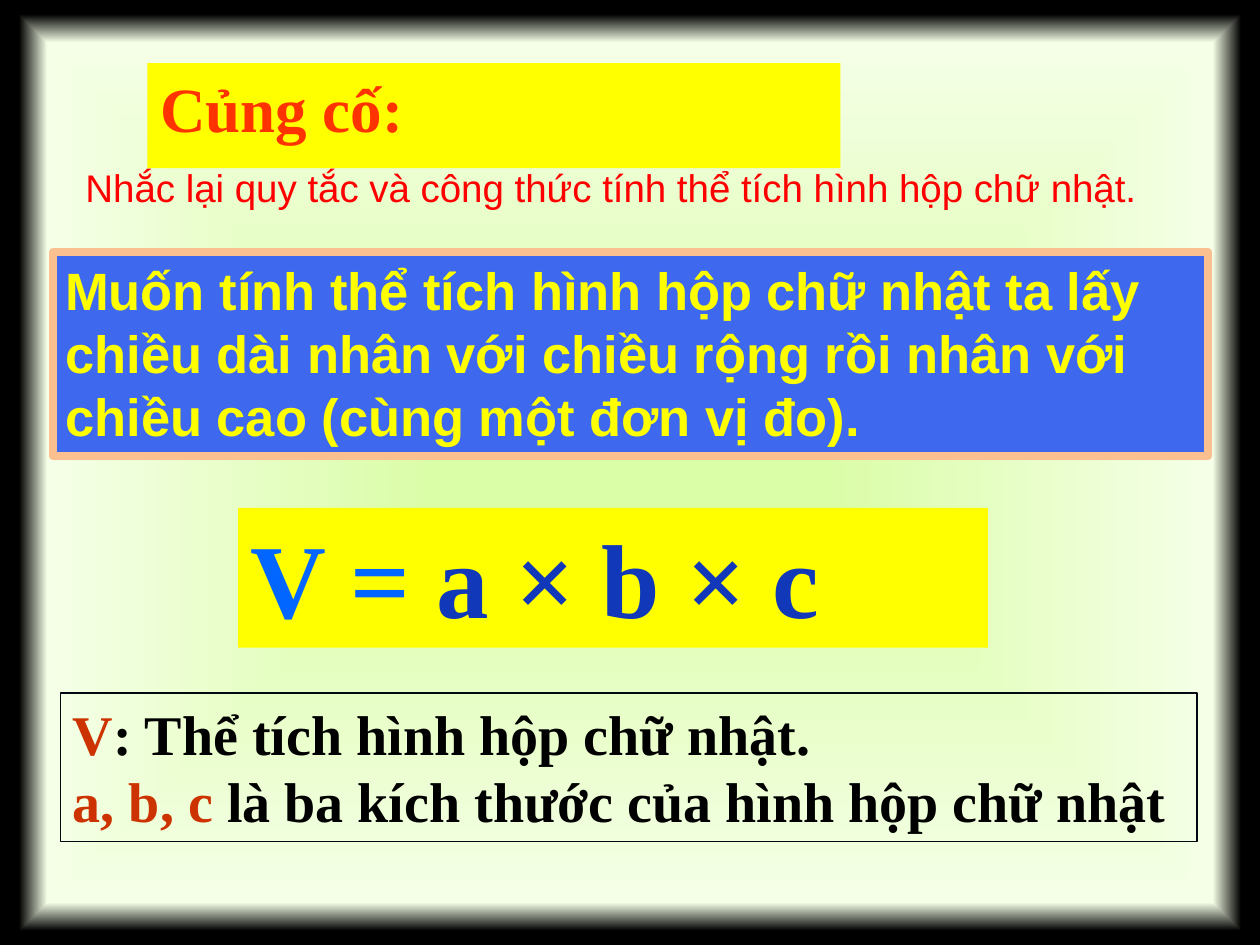
"""Build a review slide on the volume of a rectangular box."""
from dataclasses import dataclass
from typing import Optional

from lxml import etree
from pptx import Presentation
from pptx.dml.color import RGBColor
from pptx.enum import shapes, text
from pptx.oxml import ns
from pptx.util import Inches, Pt

YELLOW = RGBColor(0xFF, 0xFF, 0x00)
ORANGE = RGBColor(0xFF, 0x33, 0x00)
RED = RGBColor(0xFF, 0x00, 0x00)
SKY = RGBColor(0x00, 0x66, 0xFF)
NAVY = RGBColor(0x10, 0x38, 0xB8)
BLUE = RGBColor(0x3E, 0x68, 0xEE)
PEACH = RGBColor(0xFA, 0xC0, 0x90)
RUST = RGBColor(0xCC, 0x33, 0x00)
BLACK = RGBColor(0x00, 0x00, 0x00)
INK = RGBColor(0x00, 0x08, 0x10)
LIME = RGBColor(0xDA, 0xFD, 0xA7)
CREAM = RGBColor(0xF5, 0xFF, 0xE7)
SERIF, SANS = "Times New Roman", "Arial"
STOPS = ((8, LIME), (91, CREAM), (97, BLACK))


@dataclass
class Panel:
    area: tuple
    lines: list
    size: int
    font: str = SERIF
    bold: bool = True
    fill: Optional[RGBColor] = None
    edge: Optional[RGBColor] = None
    width: float = 0.75


HEAD = Panel((1.17, 0.5, 5.5, 0.71), [[("Củng cố:", ORANGE)]], 36, fill=YELLOW)
TASK = Panel(
    (0.58, 1.25, 8.58, 0.47),
    [[("Nhắc lại quy tắc và công thức tính thể tích hình hộp chữ nhật.", RED)]],
    22, SANS, False)
PANELS = [
    Panel((1.89, 4.03, 5.95, 1.11),
          [[("V = ", SKY), ("a × b × c", NAVY)]], 60, fill=YELLOW),
    Panel((0.48, 5.5, 9.02, 1.18),
          [[("V", RUST), (": Thể tích hình hộp chữ nhật.", BLACK)],
           [("a, b, c ", RUST), ("là ba kích thước của hình hộp chữ nhật", BLACK)]],
          32, edge=INK),
    Panel((0.42, 2, 9.17, 1.62),
          [[("Muốn tính thể tích hình hộp chữ nhật ta lấy chiều dài nhân với "
             "chiều rộng rồi nhân với chiều cao (cùng một đơn vị đo).", YELLOW)]],
          30, SANS, fill=BLUE, edge=PEACH, width=4.5),
]


def paint(slide) -> None:
    """Give the slide its radiating background."""
    fill = slide.background.fill
    fill.gradient()
    grad = slide.element.find(".//" + ns.qn("a:gradFill"))
    for child in list(grad):
        grad.remove(child)
    stops = etree.SubElement(grad, ns.qn("a:gsLst"))
    for place, color in STOPS:
        stop = etree.SubElement(stops, ns.qn("a:gs"), pos=str(place * 1000))
        etree.SubElement(stop, ns.qn("a:srgbClr"), val=str(color))
    shade = etree.SubElement(grad, ns.qn("a:path"), {"path": "shape"})
    sides = dict.fromkeys("ltrb", "50000")
    etree.SubElement(shade, ns.qn("a:fillToRect"), sides)


def write(shape, panel: Panel) -> None:
    """Put the panel's text into the shape."""
    frame = shape.text_frame
    frame.word_wrap = True
    frame.auto_size = text.MSO_AUTO_SIZE.SHAPE_TO_FIT_TEXT
    frame.vertical_anchor = text.MSO_ANCHOR.TOP
    for i, line in enumerate(panel.lines):
        para = frame.add_paragraph() if i else frame.paragraphs[0]
        para.alignment = text.PP_ALIGN.LEFT
        font = para.font
        font.name, font.size, font.bold = panel.font, Pt(panel.size), panel.bold
        for words, color in line:
            run = para.add_run()
            run.text = words
            run.font.color.rgb = color


def style(shape, panel: Panel) -> None:
    """Set the shape's fill and outline."""
    if panel.fill is None:
        shape.fill.background()
    else:
        shape.fill.solid()
        shape.fill.fore_color.rgb = panel.fill
    if panel.edge is None:
        shape.line.fill.background()
    else:
        shape.line.color.rgb = panel.edge
        shape.line.width = Pt(panel.width)


def main() -> None:
    """Build and save the slide."""
    deck = Presentation()
    deck.slide_width, deck.slide_height = Inches(10), Inches(7.5)
    slide = deck.slides.add_slide(deck.slide_layouts[5])
    paint(slide)

    title = slide.shapes.title
    title.left, title.top, title.width, title.height = map(Inches, HEAD.area)
    style(title, HEAD)
    write(title, HEAD)

    write(slide.shapes.add_textbox(*map(Inches, TASK.area)), TASK)

    for panel in PANELS:
        box = slide.shapes.add_shape(
            shapes.MSO_SHAPE.RECTANGLE, *map(Inches, panel.area))
        box.shadow.inherit = False
        style(box, panel)
        write(box, panel)
    deck.save("out.pptx")


if __name__ == "__main__":
    main()
